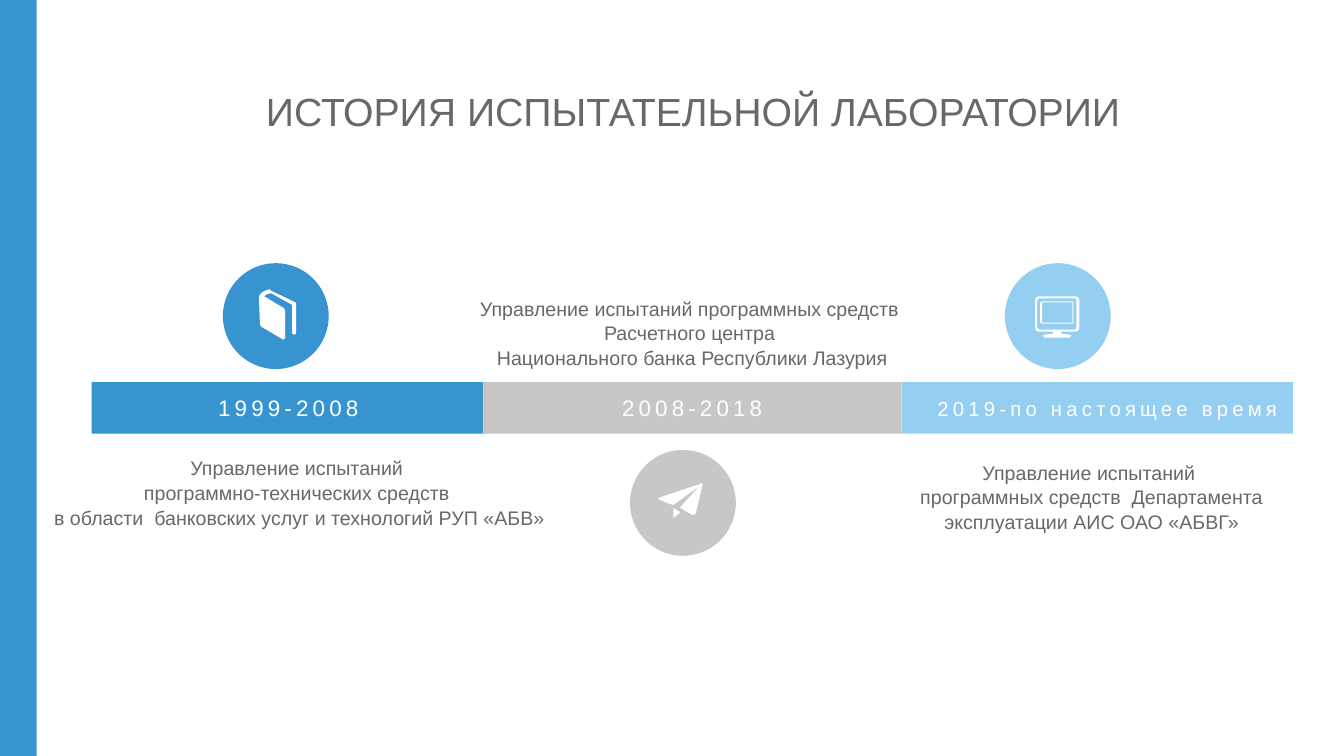
from pptx import Presentation
from pptx.dml.color import RGBColor
from pptx.enum.shapes import MSO_SHAPE
from pptx.enum.text import MSO_ANCHOR, PP_ALIGN
from pptx.util import Pt

COLORS = {"blue": "3794D1", "gray": "C7C7C6", "sky": "94CEF1",
          "text": "686867", "white": "FFFFFF"}

# Icon outlines, in hundredths of an inch from the icon's top left corner
BOOK = [[(36, 13), (13, 2), (10, 0), (5, 2), (1, 5), (0, 8), (1, 35), (2, 37),
         (24, 50), (26, 49), (26, 21), (25, 19), (5, 7), (8, 5), (12, 4),
         (32, 15), (33, 16), (33, 44), (35, 45), (37, 44), (37, 14)]]
PLANE = [[(42, 1), (0, 15), (0, 16), (9, 20), (15, 22), (41, 3), (22, 24),
          (22, 25), (34, 32), (37, 31), (44, 2), (43, 0)],
         [(15, 25), (15, 35), (22, 29)]]
MONITOR = [[(4, 0), (40, 0), (43, 1), (44, 4), (44, 31), (43, 34), (40, 35),
            (26, 35), (26, 37), (34, 38), (36, 39), (34, 41), (9, 41), (8, 39),
            (9, 38), (18, 37), (18, 35), (4, 35), (1, 34), (0, 31), (0, 4), (1, 1)],
           [(4, 2), (40, 2), (41, 4), (41, 31), (40, 33), (4, 33), (2, 31), (2, 4)]]
SCREEN = [[(5, 6), (7, 5), (37, 5), (38, 6), (38, 26), (37, 27), (7, 27), (5, 26)],
          [(7, 6), (37, 6), (37, 26), (7, 26)]]


class SlideBuilder:
    font = "Arial"
    icon_unit = Pt(0.72)

    def __init__(self, slide):
        self.s = slide

    def paint(self, sp, color):
        sp.shadow.inherit = False
        sp.fill.solid()
        sp.fill.fore_color.rgb = RGBColor.from_string(COLORS[color])
        sp.line.fill.background()

    def shape(self, kind, x, y, w, h, color):
        sp = self.s.shapes.add_shape(kind, Pt(x), Pt(y), Pt(w), Pt(h))
        self.paint(sp, color)
        return sp

    def add_lines(self, tf, lines, size, color, line_spacing=None, tracking=None):
        """Fill a text frame with centred lines; tracking is in points."""
        tf.word_wrap = True
        for i, line in enumerate(lines):
            p = tf.paragraphs[0] if i == 0 else tf.add_paragraph()
            p.alignment = PP_ALIGN.CENTER
            p.line_spacing = line_spacing
            r = p.add_run()
            r.text = line
            r.font.name = self.font
            r.font.size = Pt(size)
            r.font.color.rgb = RGBColor.from_string(COLORS[color])
            if tracking:
                r._r.get_or_add_rPr().set("spc", str(tracking * 100))

    def text(self, x, y, w, h, lines, size=14, line_spacing=1.05):
        tf = self.s.shapes.add_textbox(Pt(x), Pt(y), Pt(w), Pt(h)).text_frame
        self.add_lines(tf, lines, size, "text", line_spacing)

    def period(self, x, w, color, label, size, indent):
        """Draw one bar of the timeline with its years."""
        sp = self.shape(MSO_SHAPE.CHEVRON, x, 273, w, 36.7, color)
        sp.adjustments[0] = 0
        tf = sp.text_frame
        tf.vertical_anchor = MSO_ANCHOR.MIDDLE
        tf.margin_left = Pt(7.2 + indent)
        self.add_lines(tf, [label], size, "white", tracking=3)

    def icon(self, x, y, outlines):
        first, *others = outlines
        builder = self.s.shapes.build_freeform(*first[0], scale=self.icon_unit)
        builder.add_line_segments(first[1:])
        for outline in others:
            builder.move_to(*outline[0])
            builder.add_line_segments(outline[1:])
        self.paint(builder.convert_to_shape(Pt(x), Pt(y)), "white")


def main():
    prs = Presentation()
    prs.slide_width, prs.slide_height = Pt(960), Pt(540)
    b = SlideBuilder(prs.slides.add_slide(prs.slide_layouts[6]))

    b.shape(MSO_SHAPE.RECTANGLE, 0, 0, 26.2, 540, "blue")
    b.text(56, 59, 878, 39, ["ИСТОРИЯ ИСПЫТАТЕЛЬНОЙ ЛАБОРАТОРИИ"], 28, 1)

    periods = [
        (65.5, 281, "blue", "1999-2008", 16, 0),
        (345, 299, "gray", "2008-2018", 16, 0),
        (644.4, 279, "sky", "2019-по настоящее время", 14.5, 14),
    ]
    for period in periods:
        b.period(*period)

    badges = [
        (159.2, 188, "blue", 185, 206.6, [BOOK]),
        (450, 321.4, "gray", 470.2, 344.9, [PLANE]),
        (717.8, 188, "sky", 739.4, 211.7, [SCREEN, MONITOR]),
    ]
    for x, y, color, icon_x, icon_y, parts in badges:
        b.shape(MSO_SHAPE.OVAL, x, y, 75.6, 75.6, color)
        for outlines in parts:
            b.icon(icon_x, icon_y, outlines)

    descriptions = [
        (23, 321.5, 382, ["Управление испытаний ",
                          "программно-технических средств ",
                          "в области  банковских услуг и технологий РУП «АБВ»"]),
        (330.5, 207.5, 328, ["Управление испытаний программных средств ",
                             "Расчетного центра ",
                             "Национального банка Республики Лазурия"]),
        (635, 324.5, 289.5, ["Управление испытаний ",
                             "программных средств  Департамента эксплуатации АИС ОАО «АБВГ»"]),
    ]
    for x, y, w, lines in descriptions:
        b.text(x, y, w, 58.3, lines)

    prs.save("out.pptx")


if __name__ == "__main__":
    main()
